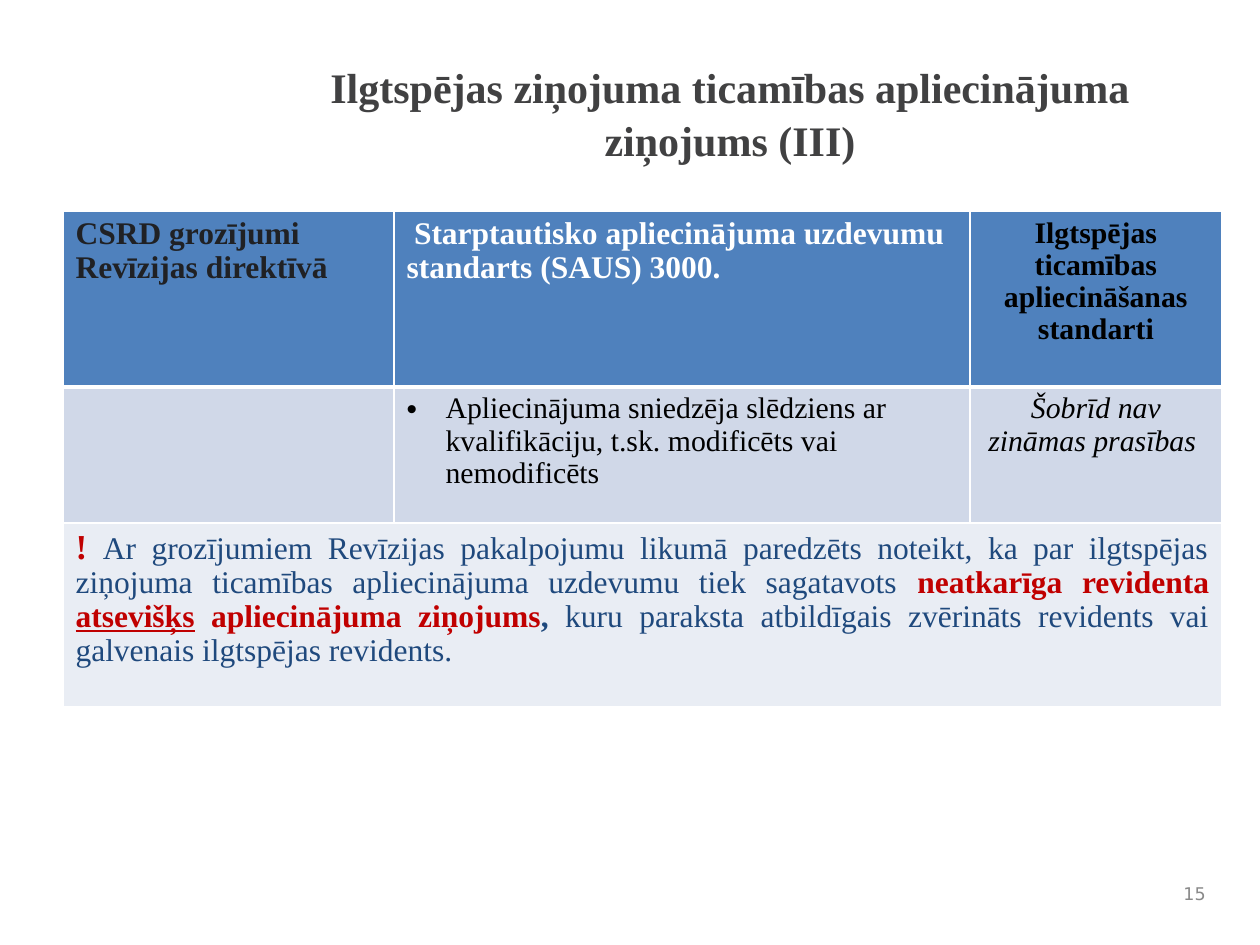
from lxml import etree
from pptx import Presentation
from pptx.dml.color import RGBColor
from pptx.enum.text import MSO_ANCHOR, PP_ALIGN
from pptx.oxml.ns import qn
from pptx.util import Emu, Pt

LEFT, CENTER, RIGHT, JUSTIFY = PP_ALIGN.LEFT, PP_ALIGN.CENTER, PP_ALIGN.RIGHT, PP_ALIGN.JUSTIFY
TOP, MIDDLE = MSO_ANCHOR.TOP, MSO_ANCHOR.MIDDLE
EMU_PER_PX = 914400 // 126
SERIF, SANS = "Times New Roman", "DejaVu Sans"
COLORS = {
    "title": "414142", "dark": "202124", "black": "000000", "white": "FFFFFF",
    "red": "C00000", "navy": "1F497D", "gray": "898989",
    "header": "4F81BD", "band": "D0D8E8", "note": "E9EDF4",
}
ROW_FILLS = ["header", "band", "note"]
COLUMN_WIDTHS = [331, 576, 252]
ROW_HEIGHTS = [176, 136, 184]
BULLET_INDENT = 39


def px(value):
    return Emu(value * EMU_PER_PX)


def color(name):
    return RGBColor.from_string(COLORS[name])


def style_font(font, size=None, fill=None, bold=None, italic=None, underline=None, name=None):
    if size:
        font.size = Pt(size)
    if fill:
        font.color.rgb = color(fill)
    if name:
        font.name = name
    if bold is not None:
        font.bold = bold
    if italic is not None:
        font.italic = italic
    if underline is not None:
        font.underline = underline


def write(paragraph, runs, align=LEFT, spacing=None, bullet=False, **style):
    """Fill a paragraph with (text, run style) pairs over one shared style."""
    paragraph.alignment = align
    if spacing:
        paragraph.line_spacing = spacing
    if bullet:
        properties = paragraph._p.get_or_add_pPr()
        properties.set("marL", str(px(BULLET_INDENT)))
        properties.set("indent", str(-px(BULLET_INDENT)))
        etree.SubElement(properties, qn("a:buFont"), typeface="Arial")
        etree.SubElement(properties, qn("a:buChar"), char="•")
    style_font(paragraph.font, **style)
    for text, run_style in runs:
        run = paragraph.add_run()
        run.text = text
        style_font(run.font, **run_style)


def add_text(slide, box, text, anchor=TOP, **style):
    frame = slide.shapes.add_textbox(*map(px, box)).text_frame
    frame.word_wrap = True
    frame.vertical_anchor = anchor
    write(frame.paragraphs[0], [(text, {})], **style)


def set_borders(cell, top, bottom):
    properties = cell._tc.get_or_add_tcPr()
    for side, width in (("L", 1), ("R", 1), ("T", top), ("B", bottom)):
        line = etree.SubElement(properties, qn(f"a:ln{side}"), w=str(Pt(width)))
        fill = etree.SubElement(line, qn("a:solidFill"))
        etree.SubElement(fill, qn("a:srgbClr"), val=COLORS["white"])


def add_grid(slide, left, top):
    """Add the empty table with its sizes, borders and row fills."""
    table = slide.shapes.add_table(
        len(ROW_HEIGHTS), len(COLUMN_WIDTHS), px(left), px(top),
        px(sum(COLUMN_WIDTHS)), px(sum(ROW_HEIGHTS))).table
    for column, width in zip(table.columns, COLUMN_WIDTHS):
        column.width = px(width)
    for index, (row, height) in enumerate(zip(table.rows, ROW_HEIGHTS)):
        row.height = px(height)
        for cell in row.cells:
            set_borders(cell, top=3 if index == 1 else 1, bottom=3 if index == 0 else 1)
            cell.fill.solid()
            cell.fill.fore_color.rgb = color(ROW_FILLS[index])
    return table


def write_cell(table, row, column, runs, **style):
    paragraph = table.cell(row, column).text_frame.paragraphs[0]
    write(paragraph, runs, name=SERIF, spacing=0.97, **style)


def main():
    presentation = Presentation()
    presentation.slide_width, presentation.slide_height = px(1260), px(945)
    slide = presentation.slides.add_slide(presentation.slide_layouts[6])

    # Title
    add_text(slide, (263, 53, 934, 142), "Ilgtspējas ziņojuma ticamības apliecinājuma ziņojums (III)",
             align=CENTER, spacing=1.05, name=SERIF, size=24, fill="title", bold=True)

    # Table header
    table = add_grid(slide, 63, 211)
    write_cell(table, 0, 0, [("CSRD grozījumi Revīzijas direktīvā", {})],
               size=18, fill="dark", bold=True)
    write_cell(table, 0, 1, [
        (" ", {"size": 17}),
        ("Starptautisko apliecinājuma uzdevumu standarts (SAUS) 3000.", {"size": 18}),
    ], fill="white", bold=True)
    write_cell(table, 0, 2, [("Ilgtspējas ticamības apliecināšanas standarti", {})],
               align=CENTER, size=17, fill="black", bold=True)

    # Requirements row
    write_cell(table, 1, 1, [
        ("Apliecinājuma sniedzēja slēdziens ar kvalifikāciju, t.sk. modificēts vai nemodificēts", {}),
    ], bullet=True, size=17, fill="black", bold=False)
    write_cell(table, 1, 2, [("Šobrīd nav zināmas prasības ", {})],
               align=CENTER, size=17, fill="black", bold=False, italic=True)

    # Note across all columns
    table.cell(2, 0).merge(table.cell(2, 2))
    plain = {"size": 18, "fill": "navy", "bold": False}
    navy_bold = {"size": 18, "fill": "navy", "bold": True}
    red_bold = {"size": 18, "fill": "red", "bold": True}
    write_cell(table, 2, 0, [
        ("!", {**red_bold, "size": 20}),
        (" ", navy_bold),
        ("Ar grozījumiem Revīzijas pakalpojumu likumā paredzēts noteikt, ka par ilgtspējas "
         "ziņojuma ticamības apliecinājuma uzdevumu tiek sagatavots ", plain),
        ("neatkarīga revidenta ", red_bold),
        ("atsevišķs", {**red_bold, "underline": True}),
        (" apliecinājuma ziņojums", red_bold),
        (",", navy_bold),
        (" kuru paraksta atbildīgais zvērināts revidents vai galvenais ilgtspējas revidents. ", plain),
    ], align=JUSTIFY)

    # Page number
    add_text(slide, (1125, 872, 93, 42), "15", anchor=MIDDLE,
             align=RIGHT, name=SANS, size=10, fill="gray")

    presentation.save("out.pptx")


if __name__ == "__main__":
    main()
